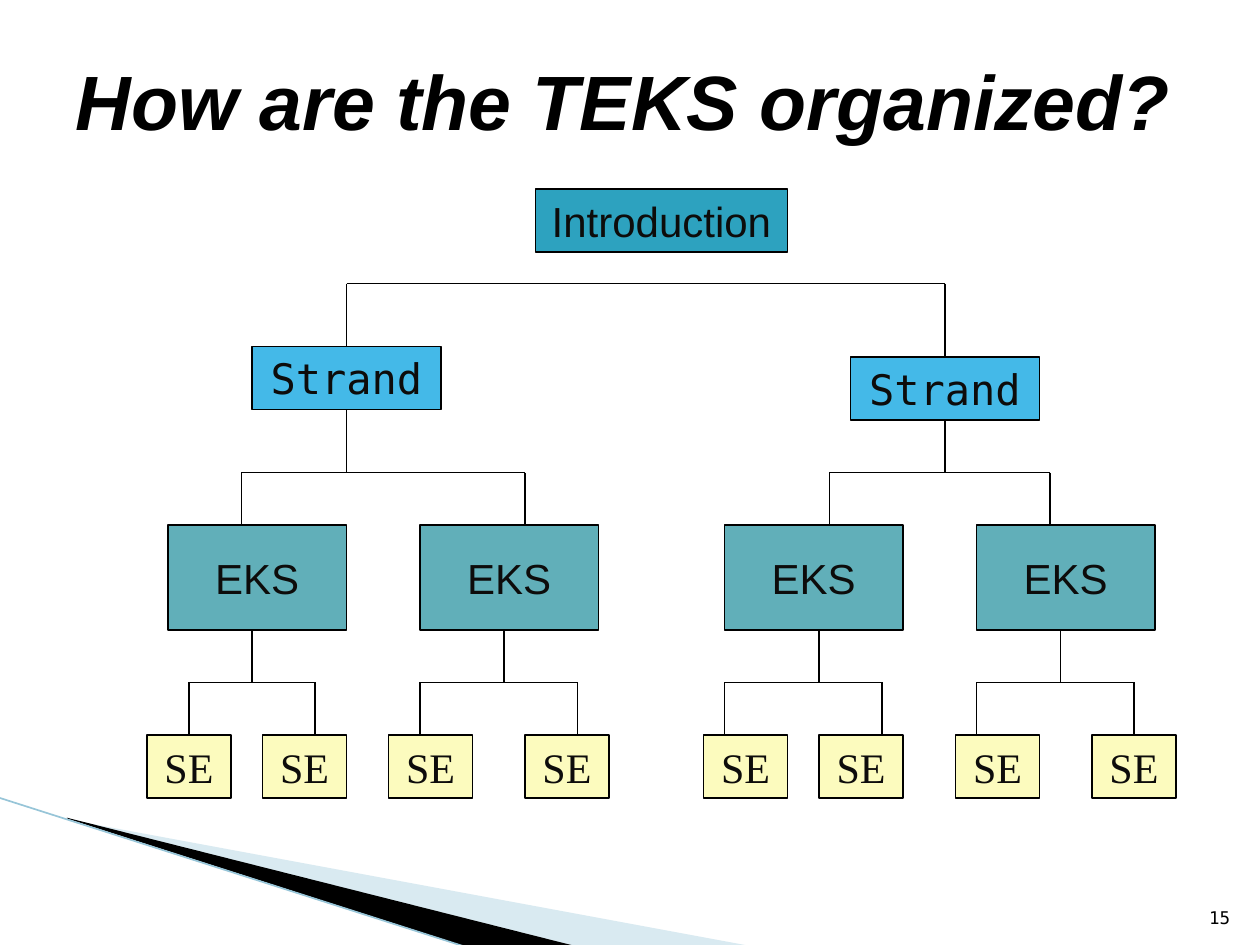
"""Build a slide with a tree diagram of how the TEKS are organized."""
from lxml import etree
from pptx import Presentation
from pptx.dml.color import RGBColor
from pptx.enum.shapes import MSO_CONNECTOR, MSO_SHAPE
from pptx.enum.text import MSO_ANCHOR, MSO_AUTO_SIZE, PP_ALIGN
from pptx.oxml.ns import qn
from pptx.util import Pt

STRAIGHT = MSO_CONNECTOR.STRAIGHT
RECTANGLE = MSO_SHAPE.RECTANGLE
MIDDLE, BOTTOM = MSO_ANCHOR.MIDDLE, MSO_ANCHOR.BOTTOM
LEFT, CENTER, RIGHT = PP_ALIGN.LEFT, PP_ALIGN.CENTER, PP_ALIGN.RIGHT
NO_AUTOFIT = MSO_AUTO_SIZE.NONE

BLACK = RGBColor(0x00, 0x00, 0x00)
INK = RGBColor(0x0D, 0x0C, 0x0B)
TEAL = RGBColor(0x2D, 0xA2, 0xBF)
SKY = RGBColor(0x44, 0xB9, 0xE8)
SEA = RGBColor(0x61, 0xAF, 0xB9)
CREAM = RGBColor(0xFC, 0xFB, 0xBE)
PALE_BLUE = RGBColor(0xA0, 0xCB, 0xDC)
EDGE_BLUE = RGBColor(0x97, 0xC5, 0xD8)

SANS, MONO, SERIF = "Arial", "DejaVu Sans Mono", "Times New Roman"

TITLE = "How are the TEKS organized?"
PAGE_NUMBER = "15"

LEVELS = [
    {"label": "Introduction", "font": SANS, "fill": TEAL, "size": (144, 36),
     "corners": [(306, 108)]},
    {"label": "Strand", "font": MONO, "fill": SKY, "size": (108, 36),
     "corners": [(144, 198), (486, 204)]},
    {"label": "EKS", "font": SANS, "fill": SEA, "size": (102, 60),
     "corners": [(x, 300) for x in (96, 240, 414, 558)]},
    {"label": "SE", "font": SERIF, "fill": CREAM, "size": (48, 36),
     "corners": [(x, 420) for x in (84, 150, 222, 300, 402, 468, 546, 624)]},
]

BRANCHES = [
    {"bar": 162, "foot": 204, "forks": [(None, 198, 540)]},
    {"stem_top": 216, "bar": 270, "foot": 306,
     "forks": [(198, 138, 300), (540, 474, 600)]},
    {"stem_top": 354, "bar": 390, "foot": 426,
     "forks": [(144, 108, 180), (288, 240, 330), (468, 414, 504), (606, 558, 648)]},
]

WEDGES = [
    (PALE_BLUE, 40, [(39.6, 468.5), (428.4, 540.5), (328.3, 540.5), (39.6, 468)]),
    (BLACK, 100, [(38.2, 467.3), (329, 540.7), (267.8, 541.4), (38.9, 468)]),
]
WEDGE_EDGE = ((-0.7, 455.8), (267.1, 541.4))


def write(shape, text, font, size, color=INK, align=CENTER, anchor=MIDDLE,
          wrap=False, bold=False, italic=False):
    frame = shape.text_frame
    frame.auto_size = NO_AUTOFIT
    frame.word_wrap = wrap
    frame.vertical_anchor = anchor
    paragraph = frame.paragraphs[0]
    paragraph.alignment = align
    run = paragraph.add_run()
    run.text = text
    run.font.name = font
    run.font.size = Pt(size)
    run.font.bold = bold
    run.font.italic = italic
    run.font.color.rgb = color


def add_line(slide, start, end, color=BLACK, width=0.75):
    line = slide.shapes.add_connector(STRAIGHT, *map(Pt, start + end))
    line.line.color.rgb = color
    line.line.width = Pt(width)
    etree.SubElement(line._element.spPr, qn("a:effectLst"))


def add_wedge(slide, color, opacity, points):
    corners = [(Pt(x), Pt(y)) for x, y in points]
    builder = slide.shapes.build_freeform(*corners[0])
    builder.add_line_segments(corners[1:], close=True)
    wedge = builder.convert_to_shape()
    wedge.shadow.inherit = False
    wedge.fill.solid()
    wedge.fill.fore_color.rgb = color
    wedge.line.fill.background()
    if opacity < 100:
        tint = wedge._element.spPr.find(qn("a:solidFill"))[0]
        etree.SubElement(tint, qn("a:alpha"), val=str(opacity * 1000))


def add_branches(slide, level):
    bar, foot = level["bar"], level["foot"]
    for stem, first, last in level["forks"]:
        if stem is not None:
            add_line(slide, (stem, level["stem_top"]), (stem, bar))
        add_line(slide, (first, bar), (last, bar))
        for leg in (first, last):
            add_line(slide, (leg, bar), (leg, foot))


def add_boxes(slide, level):
    for corner in level["corners"]:
        box = slide.shapes.add_shape(RECTANGLE, *map(Pt, corner + level["size"]))
        box.shadow.inherit = False
        box.fill.solid()
        box.fill.fore_color.rgb = level["fill"]
        box.line.color.rgb = BLACK
        box.line.width = Pt(0.75)
        write(box, level["label"], level["font"], 24)


def main():
    deck = Presentation()
    deck.slide_width, deck.slide_height = Pt(720), Pt(540)
    slide = deck.slides.add_slide(deck.slide_layouts[5])

    title = slide.shapes.title
    title.left, title.top, title.width, title.height = map(Pt, (36, 12, 648, 90))
    write(title, TITLE, SANS, 44, color=BLACK, align=LEFT, wrap=True,
          bold=True, italic=True)

    for wedge in WEDGES:
        add_wedge(slide, *wedge)
    add_line(slide, *WEDGE_EDGE, color=EDGE_BLUE, width=0.95)

    for level in BRANCHES:
        add_branches(slide, level)
    for level in LEVELS:
        add_boxes(slide, level)

    page = slide.shapes.add_textbox(*map(Pt, (681, 505, 29, 29)))
    write(page, PAGE_NUMBER, MONO, 10, color=BLACK, align=RIGHT, anchor=BOTTOM,
          wrap=True)

    deck.save("out.pptx")


if __name__ == "__main__":
    main()
